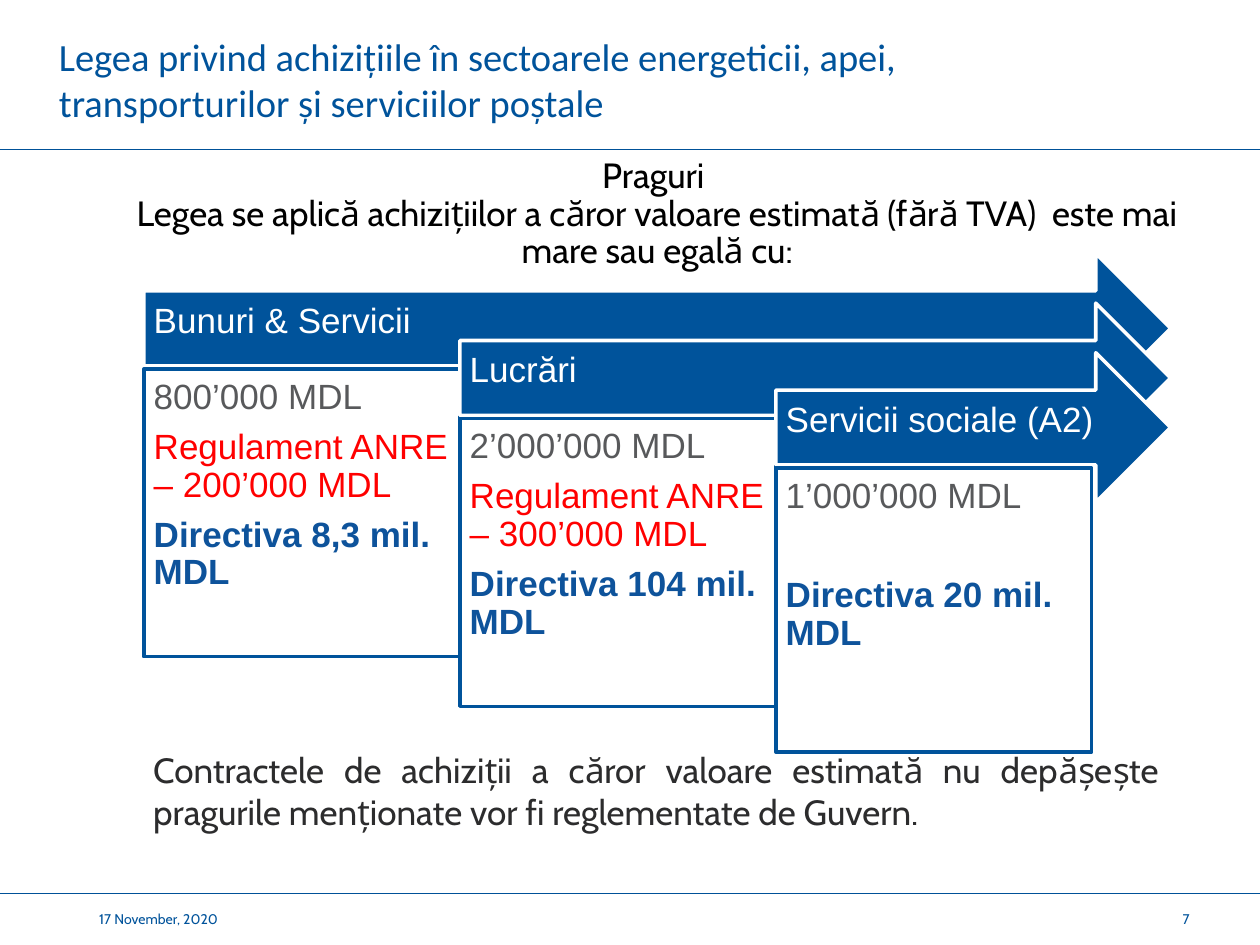
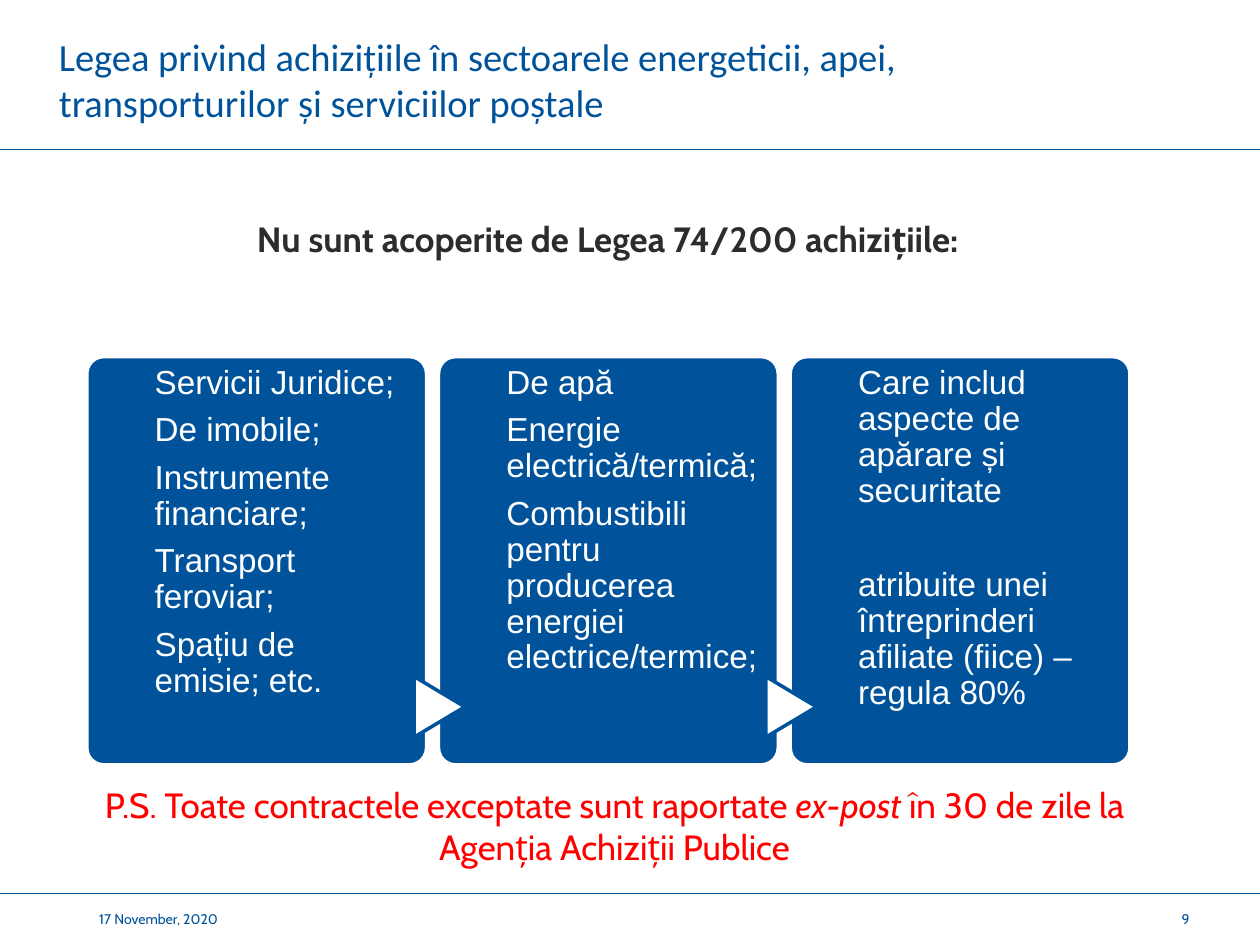
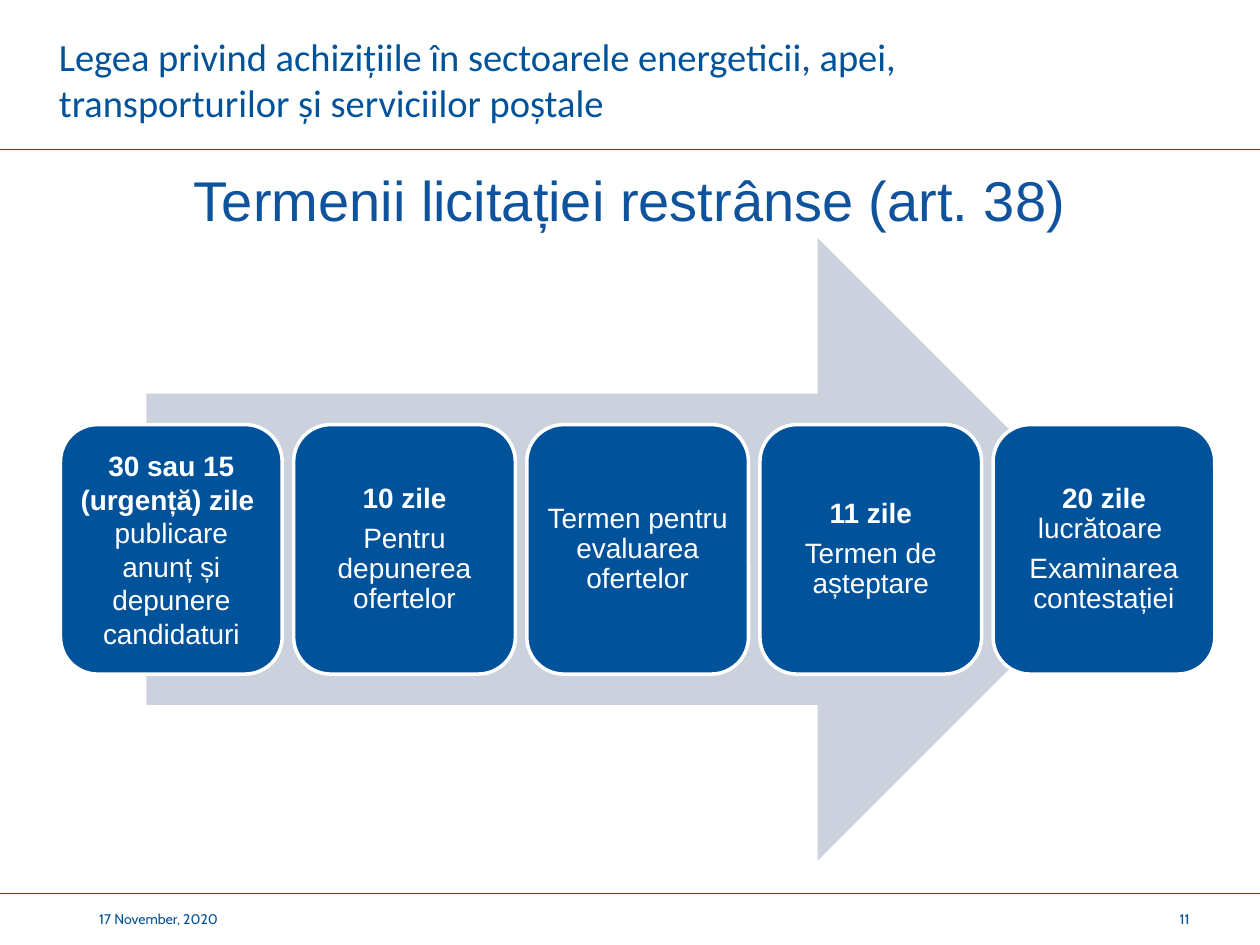
from lxml.etree import SubElement
from pptx import Presentation
from pptx.dml.color import RGBColor
from pptx.enum.shapes import MSO_CONNECTOR, MSO_SHAPE
from pptx.enum.text import MSO_ANCHOR, PP_ALIGN
from pptx.oxml.ns import qn
from pptx.util import Cm, Pt

BLUE = "00539B"
RULE_BLUE = "005198"
ACCENT_BLUE = "0E539B"
WHITE = "FFFFFF"
RED = "FF0000"
GREY = "58595B"
INK = "2C2C2D"
PALE = "CCD1DE"
TITLE = (
    "Legea privind achizițiile în sectoarele energeticii, apei,\v"
    "transporturilor și serviciilor poștale"
)


def write(shape, paragraphs, size, color, font="Arial", align=PP_ALIGN.LEFT,
          anchor=MSO_ANCHOR.TOP, insets=(0, 0, 0, 0), spacing=1.0, after=0):
    frame = shape.text_frame
    frame.word_wrap = True
    frame.vertical_anchor = anchor
    frame.margin_left, frame.margin_top, frame.margin_right, frame.margin_bottom = map(Cm, insets)
    for index, (first, *others) in enumerate(paragraphs):
        paragraph = frame.add_paragraph() if index else frame.paragraphs[0]
        paragraph.text = first
        for part in others:
            paragraph.add_run().text = part
        paragraph.alignment = align
        paragraph.line_spacing = spacing
        paragraph.space_after = Pt(after)
        for run in paragraph.runs:
            run.font.size = Pt(size)
            run.font.name = font
            run.font.color.rgb = RGBColor.from_string(color)
    return frame.paragraphs


def draw(slide, preset, left, top, width, height, fill, outline=None):
    shape = slide.shapes.add_shape(preset, Cm(left), Cm(top), Cm(width), Cm(height))
    shape.shadow.inherit = False
    shape.fill.solid()
    shape.fill.fore_color.rgb = RGBColor.from_string(fill)
    if outline:
        shape.line.color.rgb = RGBColor.from_string(outline)
        shape.line.width = Pt(2)
    else:
        shape.line.fill.background()
    return shape


presentation = Presentation()
presentation.slide_width = Cm(25.4)
presentation.slide_height = Cm(19.05)

for page in ("7", "9", "11"):
    slide = presentation.slides.add_slide(presentation.slide_layouts[6])
    for height in (3, 18):
        rule = slide.shapes.add_connector(
            MSO_CONNECTOR.STRAIGHT, 0, Cm(height), presentation.slide_width, Cm(height))
        rule.line.color.rgb = RGBColor.from_string(RULE_BLUE)
        rule.line.width = Pt(0.25)
        SubElement(rule._element.spPr, qn("a:effectLst"))
    heading = slide.shapes.add_textbox(Cm(1.19), Cm(0.1), Cm(17.58), Cm(3))
    write(heading, [(TITLE,)], 22, BLUE, "Calibri", anchor=MSO_ANCHOR.MIDDLE)
    date = slide.shapes.add_textbox(Cm(2), Cm(18), Cm(5.2), Cm(1.04))
    write(date, [("17 November, 2020",)], 8, BLUE, "Cabin", anchor=MSO_ANCHOR.MIDDLE)
    number = slide.shapes.add_textbox(Cm(22.98), Cm(18), Cm(1), Cm(1.04))
    write(number, [(page,)], 8, BLUE, "Cabin", PP_ALIGN.RIGHT, MSO_ANCHOR.MIDDLE)

thresholds, exceptions, deadlines = presentation.slides

intro = thresholds.shapes.add_textbox(Cm(2.24), Cm(3.1), Cm(22.02), Cm(2.46))
write(intro, [
    ("Praguri ",),
    ("Legea se aplică achizițiilor a căror valoare estimată (fără TVA)  este mai mare sau egală cu:",),
], 20, "000000", "Cabin", PP_ALIGN.CENTER, MSO_ANCHOR.MIDDLE, (0.25, 0.13, 0.25, 0.13), 0.9)

categories = [
    ("Bunuri & Servicii", 5.8,
     ["800’000 MDL", "Regulament ANRE – 200’000 MDL", "Directiva 8,3 mil. MDL"]),
    ("Lucrări", 5.8,
     ["2’000’000 MDL", "Regulament ANRE – 300’000 MDL", "Directiva 104 mil. MDL"]),
    ("Servicii sociale (A2)", 5.72, ["1’000’000 MDL", "Directiva 20 mil. MDL"]),
]
for step, (category, height, amounts) in enumerate(categories):
    left = 2.9 + 6.37 * step
    arrow = draw(thresholds, MSO_SHAPE.RIGHT_ARROW, left, 5.11 + step, 23.6 - left, 3.02, BLUE, WHITE)
    write(arrow, [(category,)], 20, WHITE, anchor=MSO_ANCHOR.MIDDLE,
          insets=(0.2, 0.2, 0.68, 0.46), spacing=0.9, after=7)
    card = draw(thresholds, MSO_SHAPE.RECTANGLE, left, 7.44 + step, 6.37, height, WHITE, BLUE)
    lines = write(card, [(amount,) for amount in amounts], 20, GREY,
                  insets=(0.2, 0.2, 0.2, 0.2), spacing=0.9, after=7)
    for regulation in lines[1:-1]:
        regulation.runs[0].font.color.rgb = RGBColor.from_string(RED)
    directive = lines[-1]
    directive.runs[0].font.color.rgb = RGBColor.from_string(ACCENT_BLUE)
    directive.runs[0].font.bold = True
    if len(amounts) == 2:
        directive.space_before = Pt(28)

closing = thresholds.shapes.add_textbox(Cm(2.84), Cm(14.96), Cm(20.78), Cm(2.41))
write(closing, [(
    "Contractele de achiziții a căror valoare estimată nu depășește "
    "pragurile menționate vor fi reglementate de Guvern.",
)], 20, INK, "Cabin", PP_ALIGN.JUSTIFY, insets=(0.25, 0.13, 0.25, 0.13))

subject = exceptions.shapes.add_textbox(Cm(1.55), Cm(4.39), Cm(21.41), Cm(1))
lines = write(subject, [("Nu sunt acoperite de Legea 74/200 achizițiile:",)],
              20, INK, "Cabin", PP_ALIGN.CENTER)
lines[0].runs[0].font.bold = True

exempted = [
    ["Servicii Juridice;", "De imobile;", "Instrumente financiare;",
     "Transport feroviar;", "Spațiu de emisie; etc."],
    ["De apă", "Energie electrică/termică;",
     "Combustibili pentru producerea energiei electrice/termice;"],
    ["Care includ aspecte de apărare și securitate",
     "atribuite unei întreprinderi afiliate (fiice) – regula 80%"],
]
for column, purchases in enumerate(exempted):
    offset = 7.09 * column
    panel = draw(exceptions, MSO_SHAPE.ROUNDED_RECTANGLE, 1.75 + offset, 7.19, 6.85, 8.23, BLUE, WHITE)
    panel.adjustments[0] = 0.05
    lines = write(panel, [(purchase,) for purchase in purchases], 19, WHITE,
                  insets=(1.27, 0.08, 0.25, 0), spacing=0.9, after=6.65)
    if len(purchases) == 2:
        lines[1].space_before = Pt(27)
    if column:
        pointer = draw(exceptions, MSO_SHAPE.FLOWCHART_EXTRACT,
                       1.16 + offset, 13.74, 1.22, 1.02, WHITE, BLUE)
        pointer.rotation = 90

postscript = exceptions.shapes.add_textbox(Cm(2), Cm(15.8), Cm(20.78), Cm(1.8))
lines = write(postscript, [(
    "P.S. Toate contractele exceptate sunt raportate ",
    "ex-post",
    " în 30 de zile la Agenția Achiziții Publice",
)], 20, RED, "Cabin", PP_ALIGN.CENTER)
lines[0].runs[1].font.italic = True

subject = deadlines.shapes.add_textbox(Cm(2), Cm(3.33), Cm(21.41), Cm(1.63))
write(subject, [("Termenii licitației restrânse (art. 38)",)], 32, ACCENT_BLUE, align=PP_ALIGN.CENTER)
draw(deadlines, MSO_SHAPE.RIGHT_ARROW, 2.95, 4.8, 19.81, 12.55, PALE)

stages = [
    [("30 sau 15 (urgență) zile ",), ("publicare anunț și depunere candidaturi",)],
    [("10 zile",), ("Pentru depunerea ofertelor",)],
    [("Termen pentru evaluarea ofertelor",)],
    [("11 zile",), ("Termen de așteptare",)],
    [("20 zile ", "lucrătoare "), ("Examinarea contestației",)],
]
for position, stage in enumerate(stages):
    spacing, after = (0.9, 5.6) if position else (1.0, 0)
    card = draw(deadlines, MSO_SHAPE.ROUNDED_RECTANGLE,
                1.22 + 4.7 * position, 8.56, 4.47, 5.03, BLUE, WHITE)
    lines = write(card, stage, 16, WHITE, align=PP_ALIGN.CENTER, anchor=MSO_ANCHOR.MIDDLE,
                  insets=(0.16, 0.16, 0.16, 0.16), spacing=spacing, after=after)
    lines[0].runs[0].font.bold = len(stage) > 1

presentation.save("out.pptx")
